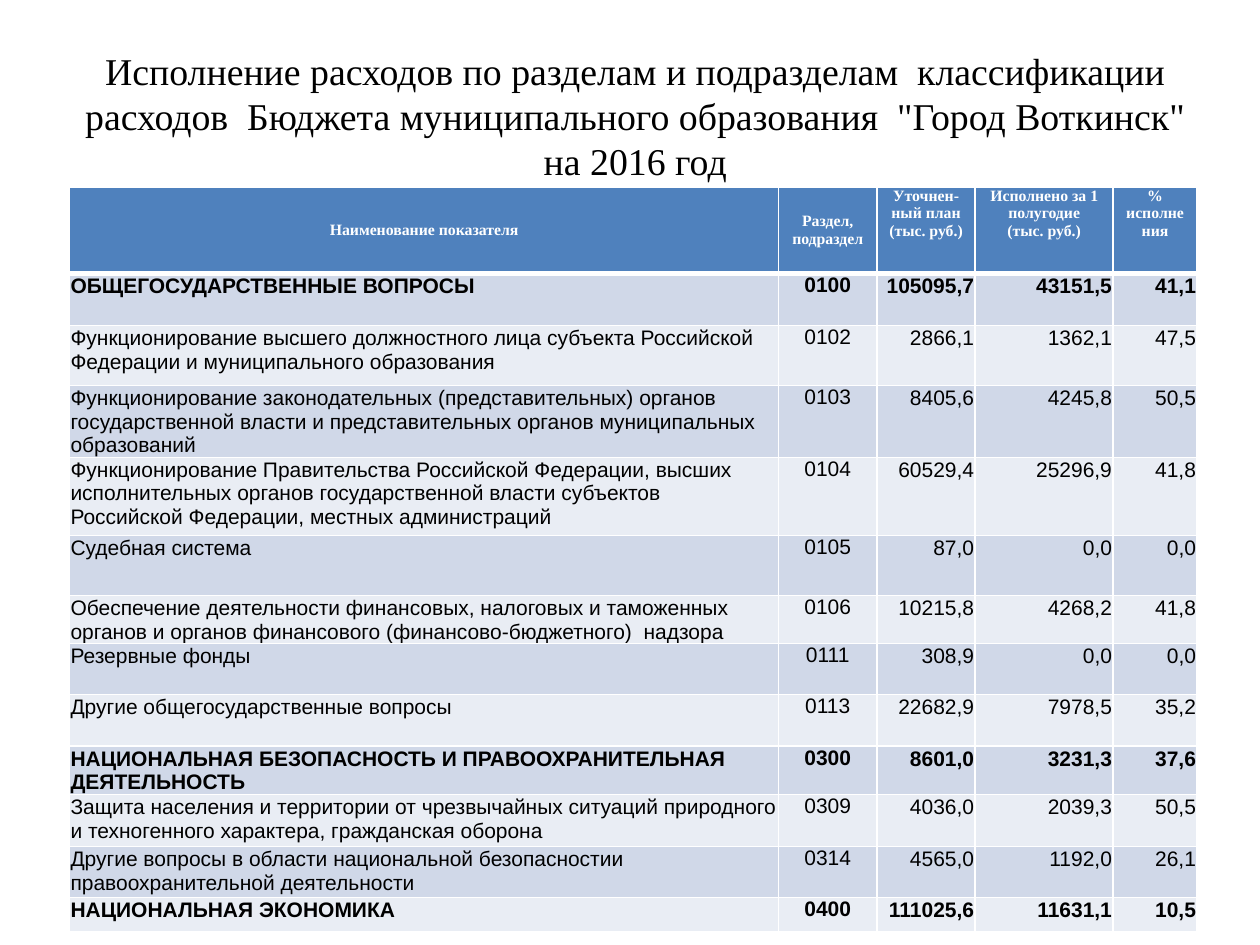
import pptx
import pptx.util
import pptx.dml.color
import pptx.enum.text
import pptx.oxml

Pt = pptx.util.Pt
RGB = pptx.dml.color.RGBColor
ALIGN = pptx.enum.text.PP_ALIGN
ANCHOR = pptx.enum.text.MSO_ANCHOR

# Content
TITLE = ('Исполнение расходов по разделам и подразделам  классификации '
         'расходов  Бюджета муниципального образования  "Город Воткинск" на 2016 год')
HEADER = [
    ["Наименование показателя"],
    ["Раздел,", "подраздел"],
    ["Уточнен-ный план", "(тыс. руб.)"],
    ["Исполнено за 1 полугодие", "(тыс. руб.)"],
    ["% исполнения"],
]
# Name, code, plan, actual, percent, row height
ROWS = [
    ("ОБЩЕГОСУДАРСТВЕННЫЕ ВОПРОСЫ", "0100", "105095,7", "43151,5", "41,1", 29.7),
    ("Функционирование высшего должностного лица субъекта Российской Федерации "
     "и муниципального образования", "0102", "2866,1", "1362,1", "47,5", 34.3),
    ("Функционирование законодательных (представительных) органов государственной власти "
     "и представительных органов муниципальных  образований",
     "0103", "8405,6", "4245,8", "50,5", 41.1),
    ("Функционирование Правительства Российской Федерации, высших  исполнительных органов "
     "государственной власти субъектов Российской Федерации, местных администраций",
     "0104", "60529,4", "25296,9", "41,8", 44.6),
    ("Судебная система", "0105", "87,0", "0,0", "0,0", 34.3),
    ("Обеспечение деятельности финансовых, налоговых и таможенных органов и органов "
     "финансового (финансово-бюджетного)  надзора",
     "0106", "10215,8", "4268,2", "41,8", 27.4),
    ("Резервные фонды", "0111", "308,9", "0,0", "0,0", 29.2),
    ("Другие общегосударственные вопросы", "0113", "22682,9", "7978,5", "35,2", 29.4),
    ("НАЦИОНАЛЬНАЯ БЕЗОПАСНОСТЬ И ПРАВООХРАНИТЕЛЬНАЯ ДЕЯТЕЛЬНОСТЬ",
     "0300", "8601,0", "3231,3", "37,6", 27.7),
    ("Защита населения и территории от чрезвычайных ситуаций природного и техногенного "
     "характера, гражданская оборона", "0309", "4036,0", "2039,3", "50,5", 29.7),
    ("Другие вопросы в области национальной безопасностии правоохранительной деятельности",
     "0314", "4565,0", "1192,0", "26,1", 29.1),
    ("НАЦИОНАЛЬНАЯ ЭКОНОМИКА", "0400", "111025,6", "11631,1", "10,5", 19.4),
]
COL_WIDTHS = [405.2, 56.2, 56.2, 78.8, 48]
HEADER_HEIGHT = 49.4
LEFT, TOP = 39.7, 106.9

BLACK = RGB(0x00, 0x00, 0x00)
WHITE = RGB(0xFF, 0xFF, 0xFF)
BLUE = RGB(0x4F, 0x81, 0xBD)
BANDS = [RGB(0xD0, 0xD8, 0xE8), RGB(0xE9, 0xED, 0xF4)]
SERIF, SANS = "Times New Roman", "Arial"


def add_run(p, text, size, font, color, bold):
    r = p.add_run()
    r.text = text
    r.font.size, r.font.name, r.font.bold = Pt(size), font, bold
    r.font.color.rgb = color


def set_borders(cell, bottom):
    tc_pr = cell._tc.get_or_add_tcPr()
    widths = [("lnL", 1), ("lnR", 1), ("lnT", 1), ("lnB", bottom)]
    for i, (side, width) in enumerate(widths):
        tc_pr.insert(i, pptx.oxml.parse_xml(
            f'<a:{side} xmlns:a="http://schemas.openxmlformats.org/drawingml/2006/main" '
            f'w="{Pt(width)}"><a:solidFill><a:srgbClr val="{WHITE}"/></a:solidFill></a:{side}>'))


def fill_cell(cell, lines, size, font, color, bold, align, fill, insets,
              anchor=ANCHOR.TOP, bottom=1):
    side, top = insets
    cell.margin_left = cell.margin_right = Pt(side)
    cell.margin_top, cell.margin_bottom = Pt(top), Pt(0)
    cell.vertical_anchor = anchor
    cell.fill.solid()
    cell.fill.fore_color.rgb = fill
    set_borders(cell, bottom)
    tf = cell.text_frame
    for i, line in enumerate(lines):
        p = tf.add_paragraph() if i else tf.paragraphs[0]
        p.alignment = align
        add_run(p, line, size, font, color, bold)


prs = pptx.Presentation()
prs.slide_width, prs.slide_height = Pt(720), Pt(540)
s = prs.slides.add_slide(prs.slide_layouts[5])

# Title, kept clear of the table by a deep bottom inset
title = s.shapes.title
title.left, title.top, title.width, title.height = Pt(39.7), Pt(21.6), Pt(646.6), Pt(113)
tf = title.text_frame
tf.auto_size = pptx.enum.text.MSO_AUTO_SIZE.NONE
tf.word_wrap = True
tf.vertical_anchor = ANCHOR.MIDDLE
tf.margin_bottom = Pt(28)
p = tf.paragraphs[0]
p.alignment = ALIGN.CENTER
add_run(p, TITLE, 21.6, SERIF, BLACK, False)

# Table grid
heights = [HEADER_HEIGHT] + [row[-1] for row in ROWS]
table = s.shapes.add_table(len(heights), len(COL_WIDTHS), Pt(LEFT), Pt(TOP),
                           Pt(sum(COL_WIDTHS)), Pt(sum(heights))).table
for column, width in zip(table.columns, COL_WIDTHS):
    column.width = Pt(width)
for row, height in zip(table.rows, heights):
    row.height = Pt(height)

# Header row
for c, lines in enumerate(HEADER):
    fill_cell(table.cell(0, c), lines, 9, SERIF, WHITE, True, ALIGN.CENTER, BLUE, (5, 0),
              ANCHOR.MIDDLE if c < 2 else ANCHOR.TOP, bottom=3)

# Body rows: section totals (codes ending in 00) are bold
for i, (*values, height) in enumerate(ROWS):
    bold = values[1].endswith("00")
    for c, value in enumerate(values):
        align = [ALIGN.LEFT, ALIGN.CENTER][c] if c < 2 else ALIGN.RIGHT
        insets = (5, 0) if c == 1 else (0.6, 0.6)
        fill_cell(table.cell(i + 1, c), [value], 12, SANS, BLACK, bold, align,
                  BANDS[i % 2], insets)

prs.save("out.pptx")
